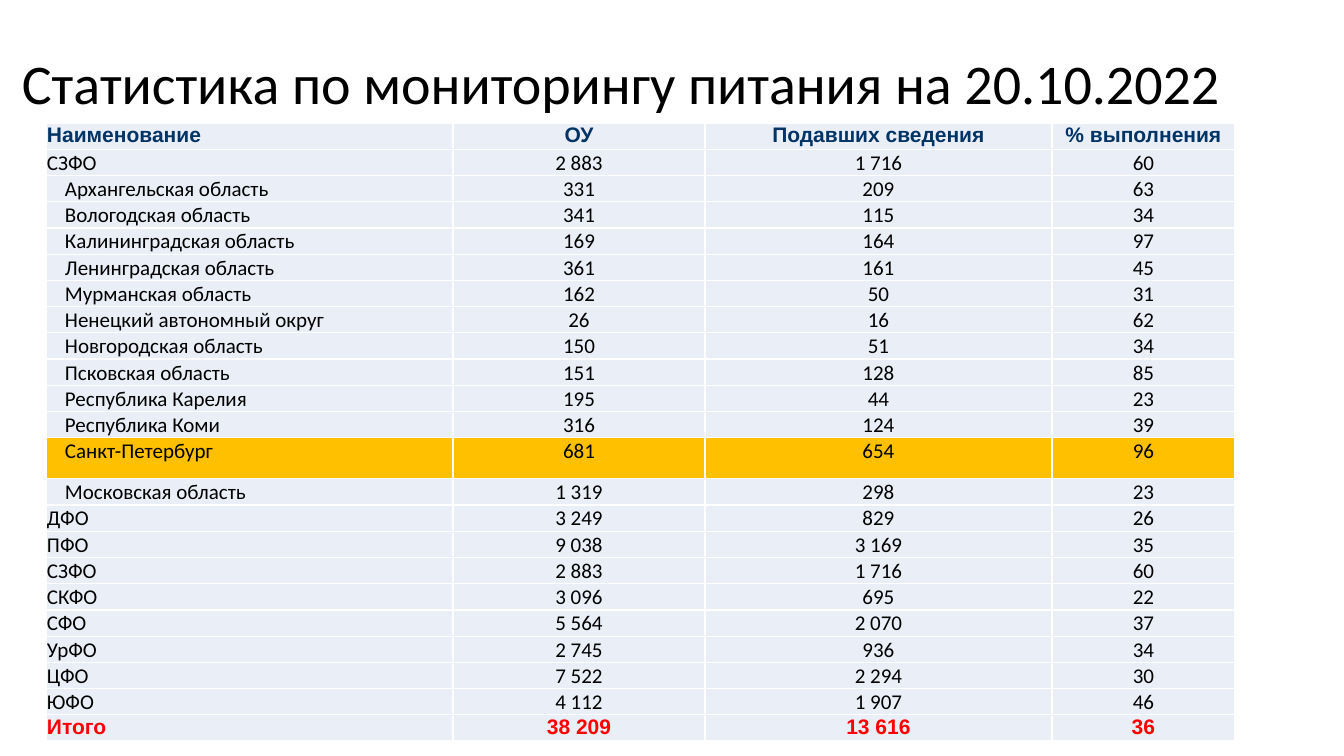
"""Build the slide with school meal monitoring statistics by region."""
import pptx
import pptx.util
import pptx.dml.color
import pptx.enum.text
import pptx.oxml
import pptx.oxml.ns

PX = 914400 / 100.8
BLACK = pptx.dml.color.RGBColor(0x00, 0x00, 0x00)
NAVY = pptx.dml.color.RGBColor(0x00, 0x33, 0x66)
RED = pptx.dml.color.RGBColor(0xFF, 0x00, 0x00)
PALE_BLUE = pptx.dml.color.RGBColor(0xEA, 0xEF, 0xF7)
AMBER = pptx.dml.color.RGBColor(0xFF, 0xC0, 0x00)
WHITE = pptx.dml.color.RGBColor(0xFF, 0xFF, 0xFF)

COLUMN_WIDTHS = [407, 252, 347, 183]
ROW_HEIGHT = 21
HIGHLIGHT_HEIGHT = 41
HIGHLIGHT_REGION = "Санкт-Петербург"
REGION_ROWS = range(2, 14)
ROWS = [
    ("Наименование", "ОУ", "Подавших сведения", "% выполнения"),
    ("СЗФО", "2 883", "1 716", "60"),
    ("Архангельская область", "331", "209", "63"),
    ("Вологодская область", "341", "115", "34"),
    ("Калининградская область", "169", "164", "97"),
    ("Ленинградская область", "361", "161", "45"),
    ("Мурманская область", "162", "50", "31"),
    ("Ненецкий автономный округ", "26", "16", "62"),
    ("Новгородская область", "150", "51", "34"),
    ("Псковская область", "151", "128", "85"),
    ("Республика Карелия", "195", "44", "23"),
    ("Республика Коми", "316", "124", "39"),
    (HIGHLIGHT_REGION, "681", "654", "96"),
    ("Московская область", "1 319", "298", "23"),
    ("ДФО", "3 249", "829", "26"),
    ("ПФО", "9 038", "3 169", "35"),
    ("СЗФО", "2 883", "1 716", "60"),
    ("СКФО", "3 096", "695", "22"),
    ("СФО", "5 564", "2 070", "37"),
    ("УрФО", "2 745", "936", "34"),
    ("ЦФО", "7 522", "2 294", "30"),
    ("ЮФО", "4 112", "1 907", "46"),
    ("Итого", "38 209", "13 616", "36"),
]


def px(length):
    return pptx.util.Emu(round(length * PX))


def add_borders(cell, color, width):
    properties = cell._tc.get_or_add_tcPr()
    for side in ("lnL", "lnR", "lnT", "lnB"):
        properties.append(pptx.oxml.parse_xml(
            f'<a:{side} {pptx.oxml.ns.nsdecls("a")} w="{width}"><a:solidFill>'
            f'<a:srgbClr val="{color}"/></a:solidFill></a:{side}>'))


presentation = pptx.Presentation()
presentation.slide_width = px(1344)
presentation.slide_height = px(756)
slide = presentation.slides.add_slide(presentation.slide_layouts[6])

title = slide.shapes.add_textbox(px(12), px(13), px(1304), px(146))
title.text_frame.word_wrap = True
title.text_frame.vertical_anchor = pptx.enum.text.MSO_ANCHOR.MIDDLE
paragraph = title.text_frame.paragraphs[0]
paragraph.text = "Статистика по мониторингу питания на 20.10.2022"
paragraph.line_spacing = 0.9
paragraph.font.name = "Calibri"
paragraph.font.size = pptx.util.Pt(40)
paragraph.font.color.rgb = BLACK

table_height = ROW_HEIGHT * (len(ROWS) - 1) + HIGHLIGHT_HEIGHT
table = slide.shapes.add_table(
    len(ROWS), len(COLUMN_WIDTHS), px(46), px(123),
    px(sum(COLUMN_WIDTHS)), px(table_height)).table
table.first_row = False
table.horz_banding = False
for column, width in zip(table.columns, COLUMN_WIDTHS):
    column.width = px(width)

for row_index, values in enumerate(ROWS):
    highlighted = values[0] == HIGHLIGHT_REGION
    emphasized = row_index in (0, len(ROWS) - 1)
    text_color = {0: NAVY, len(ROWS) - 1: RED}.get(row_index, BLACK)
    table.rows[row_index].height = px(HIGHLIGHT_HEIGHT if highlighted else ROW_HEIGHT)
    for column_index, value in enumerate(values):
        cell = table.cell(row_index, column_index)
        indented = column_index == 0 and row_index in REGION_ROWS
        cell.margin_left = px(19 if indented else 1)
        cell.margin_top = cell.margin_right = px(1)
        cell.margin_bottom = 0
        add_borders(cell, WHITE, pptx.util.Pt(1))
        cell.fill.solid()
        cell.fill.fore_color.rgb = AMBER if highlighted else PALE_BLUE
        paragraph = cell.text_frame.paragraphs[0]
        paragraph.text = value
        if column_index > 0:
            paragraph.alignment = pptx.enum.text.PP_ALIGN.CENTER
        paragraph.font.name = "Arial" if emphasized else "Calibri"
        paragraph.font.size = pptx.util.Pt(15)
        paragraph.font.bold = emphasized
        paragraph.font.color.rgb = text_color

presentation.save("out.pptx")
